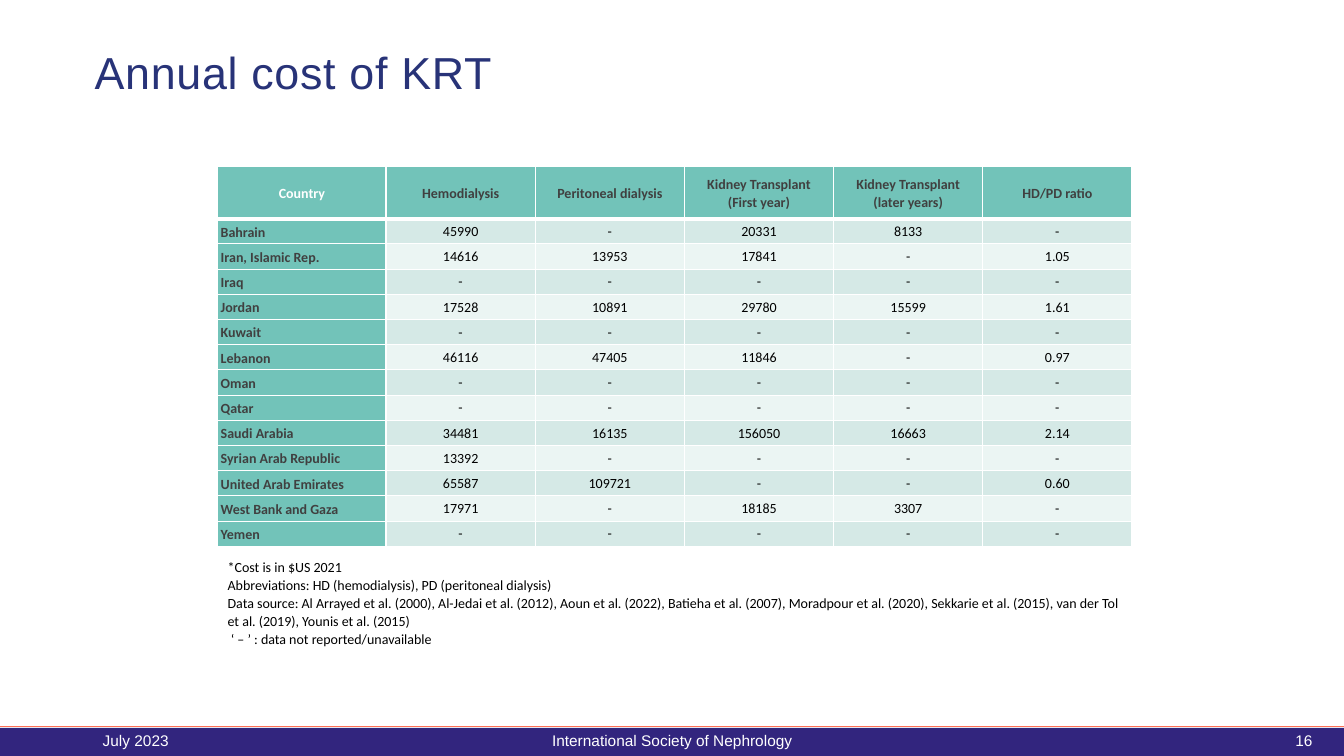
from lxml import etree
from pptx import Presentation
from pptx.dml.color import RGBColor
from pptx.enum.shapes import MSO_CONNECTOR, MSO_SHAPE
from pptx.enum.text import MSO_ANCHOR, PP_ALIGN
from pptx.oxml.ns import qn
from pptx.util import Inches, Pt

LEFT, MID, RIGHT = PP_ALIGN.LEFT, PP_ALIGN.CENTER, PP_ALIGN.RIGHT
TOP, CENTER = MSO_ANCHOR.TOP, MSO_ANCHOR.MIDDLE
RECT, LINE = MSO_SHAPE.RECTANGLE, MSO_CONNECTOR.STRAIGHT

WHITE = RGBColor(0xFF, 0xFF, 0xFF)
BLACK = RGBColor(0x00, 0x00, 0x00)
GRAY = RGBColor(0x40, 0x40, 0x40)
NAVY = RGBColor(0x28, 0x33, 0x78)
PURPLE = RGBColor(0x32, 0x25, 0x7E)
CORAL = RGBColor(0xFE, 0x70, 0x55)
TEAL = RGBColor(0x72, 0xC3, 0xB9)
BANDS = (RGBColor(0xD5, 0xE9, 0xE6), RGBColor(0xEB, 0xF5, 0xF3))

# The slide is a grid of 40 columns and 30 rows
COLS, ROWS = 40, 30

HEAD = ["Country", "Hemodialysis", "Peritoneal dialysis",
        "Kidney Transplant\n(First year)", "Kidney Transplant\n(later years)",
        "HD/PD ratio"]
COSTS = {
    "Bahrain": "45990 - 20331 8133 -",
    "Iran, Islamic Rep.": "14616 13953 17841 - 1.05",
    "Iraq": "- - - - -",
    "Jordan": "17528 10891 29780 15599 1.61",
    "Kuwait": "- - - - -",
    "Lebanon": "46116 47405 11846 - 0.97",
    "Oman": "- - - - -",
    "Qatar": "- - - - -",
    "Saudi Arabia": "34481 16135 156050 16663 2.14",
    "Syrian Arab Republic": "13392 - - - -",
    "United Arab Emirates": "65587 109721 - - 0.60",
    "West Bank and Gaza": "17971 - 18185 3307 -",
    "Yemen": "- - - - -",
}
NOTES = "\n".join([
    "*Cost is in $US 2021",
    "Abbreviations: HD (hemodialysis), PD (peritoneal dialysis)",
    "Data source: Al Arrayed et al. (2000), Al-Jedai et al. (2012), "
    "Aoun et al. (2022), Batieha et al. (2007), Moradpour et al. (2020), "
    "Sekkarie et al. (2015), van der Tol et al. (2019), Younis et al. (2015)",
    " ‘ – ’ : data not reported/unavailable",
])


class Deck:
    def __init__(self):
        self.prs = Presentation()
        self.prs.slide_width = Inches(13.33)
        self.prs.slide_height = Inches(7.5)
        self.slide = self.prs.slides.add_slide(self.prs.slide_layouts[6])
        self.shapes = self.slide.shapes

    def x(self, cols):
        return round(self.prs.slide_width * cols / COLS)

    def y(self, rows):
        return round(self.prs.slide_height * rows / ROWS)

    def area(self, col, row, wide, high):
        return self.x(col), self.y(row), self.x(wide), self.y(high)

    def fill_in(self, frame, text, size, color, font="Arial", bold=False,
                align=LEFT, gap=1.0, track=0):
        frame.text = text
        for para in frame.paragraphs:
            para.alignment = align
            para.line_spacing = gap
            for run in para.runs:
                run.font.size = Pt(size)
                run.font.name = font
                run.font.bold = bold
                run.font.color.rgb = color
                if track:
                    run.font._element.set("spc", str(track))

    def text(self, place, text, size, color, anchor=CENTER, **style):
        frame = self.shapes.add_textbox(*self.area(*place)).text_frame
        frame.word_wrap = True
        frame.vertical_anchor = anchor
        self.fill_in(frame, text, size, color, **style)

    def bar(self, place, color):
        bar = self.shapes.add_shape(RECT, *self.area(*place))
        bar.shadow.inherit = False
        bar.fill.solid()
        bar.fill.fore_color.rgb = color
        bar.line.fill.background()

    def rule(self, row, color, width):
        y = self.y(row)
        rule = self.shapes.add_connector(LINE, 0, y, self.x(COLS), y)
        rule.line.color.rgb = color
        rule.line.width = Pt(width)
        etree.SubElement(rule._element.spPr, qn("a:effectLst"))

    def edges(self, cell, base):
        props = cell._tc.get_or_add_tcPr()
        for side, width in (("L", 1), ("R", 1), ("T", 1), ("B", base)):
            edge = etree.SubElement(props, qn("a:ln" + side), w=str(Pt(width)))
            fill = etree.SubElement(edge, qn("a:solidFill"))
            etree.SubElement(fill, qn("a:srgbClr"), val=str(WHITE))

    def cell(self, cell, text, fill, color, pad, base=1, **style):
        self.edges(cell, base)
        cell.fill.solid()
        cell.fill.fore_color.rgb = fill
        cell.vertical_anchor = CENTER
        cell.margin_left = cell.margin_right = Inches(pad)
        cell.margin_top, cell.margin_bottom = Inches(0.01), 0
        self.fill_in(cell.text_frame, text, 10, color, font="Calibri", **style)

    def table(self, col, row, wides, highs, head, body):
        place = self.area(col, row, sum(wides), sum(highs))
        table = self.shapes.add_table(len(highs), len(wides), *place).table
        table.first_row = table.horz_banding = False
        for part, wide in zip(table.columns, wides):
            part.width = self.x(wide)
        for part, high in zip(table.rows, highs):
            part.height = self.y(high)
        # Header row
        for c, label in enumerate(head):
            self.cell(table.cell(0, c), label, TEAL, GRAY if c else WHITE,
                      0.03, base=3, bold=True, align=MID, gap=1.06)
        # Country names and banded values
        for r, (name, costs) in enumerate(body.items(), 1):
            self.cell(table.cell(r, 0), name, TEAL, GRAY, 0.03,
                      bold=True, gap=1.06)
            for c, cost in enumerate(costs.split(), 1):
                self.cell(table.cell(r, c), cost, BANDS[(r - 1) % 2], BLACK,
                          0.01, align=MID)


def main():
    deck = Deck()

    # Footer band
    deck.bar((0, 28.88, COLS, 1.12), PURPLE)
    deck.rule(28.84, CORAL, 0.75)

    # Cost table and its notes
    deck.table(6.48, 6.6, [5.01] + [4.44] * 5, [2.08] + [1] * len(COSTS),
               HEAD, COSTS)
    deck.text((6.48, 21.92, 27.45, 4), NOTES, 10, BLACK, anchor=TOP,
              font="Calibri", gap=1.07)

    # Title
    deck.text((2.52, 1.56, 27.78, 2.84), "Annual cost of KRT", 32, NAVY,
              gap=0.9, track=50)

    # Footer text
    for col, wide, label, align in (
            (2.76, 9, "July 2023", LEFT),
            (13.26, 13.5, "International Society of Nephrology", MID),
            (28.26, 11.1, "16", RIGHT)):
        deck.text((col, 28.6, wide, 1.6), label, 11, WHITE, align=align)

    deck.prs.save("out.pptx")


if __name__ == "__main__":
    main()
